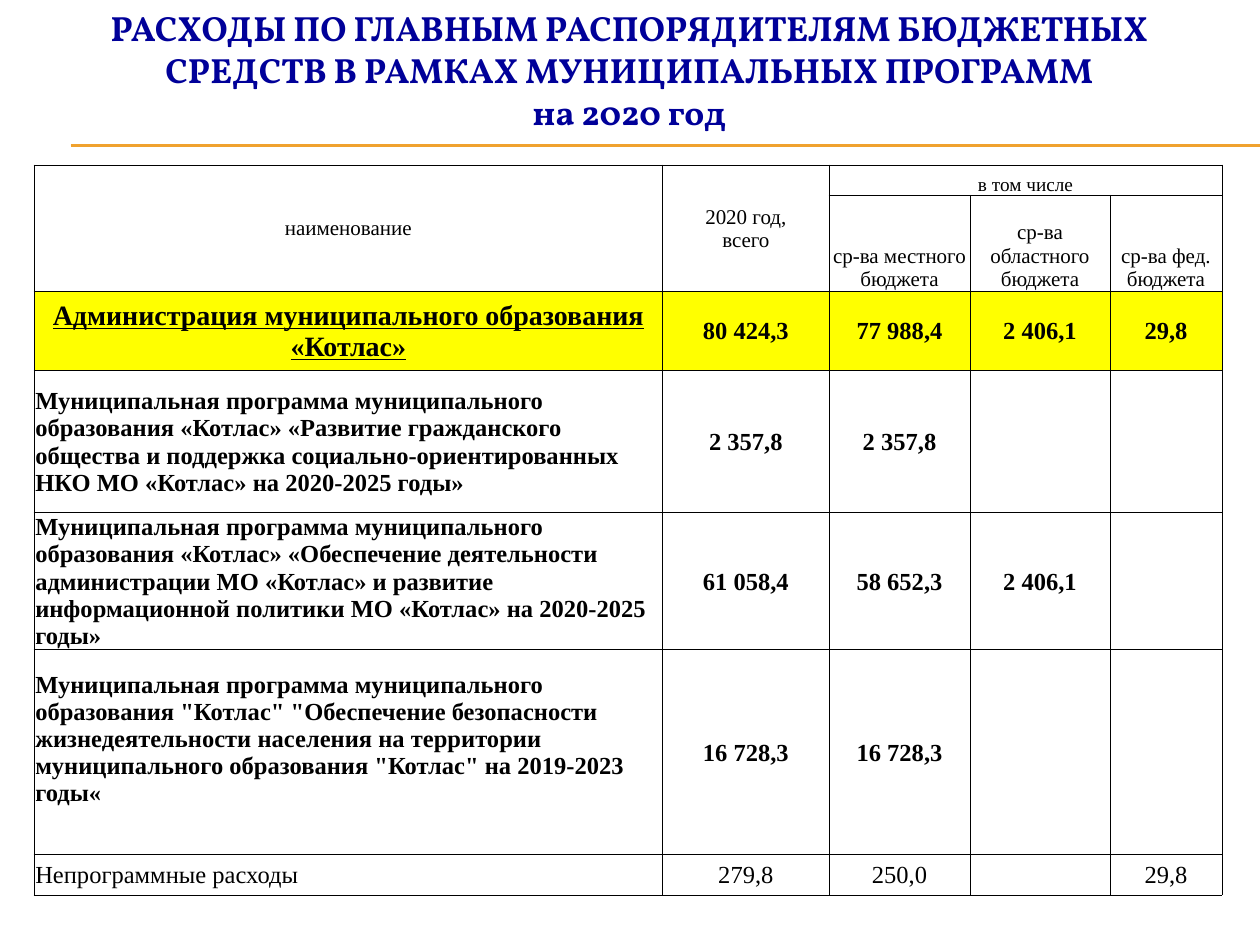
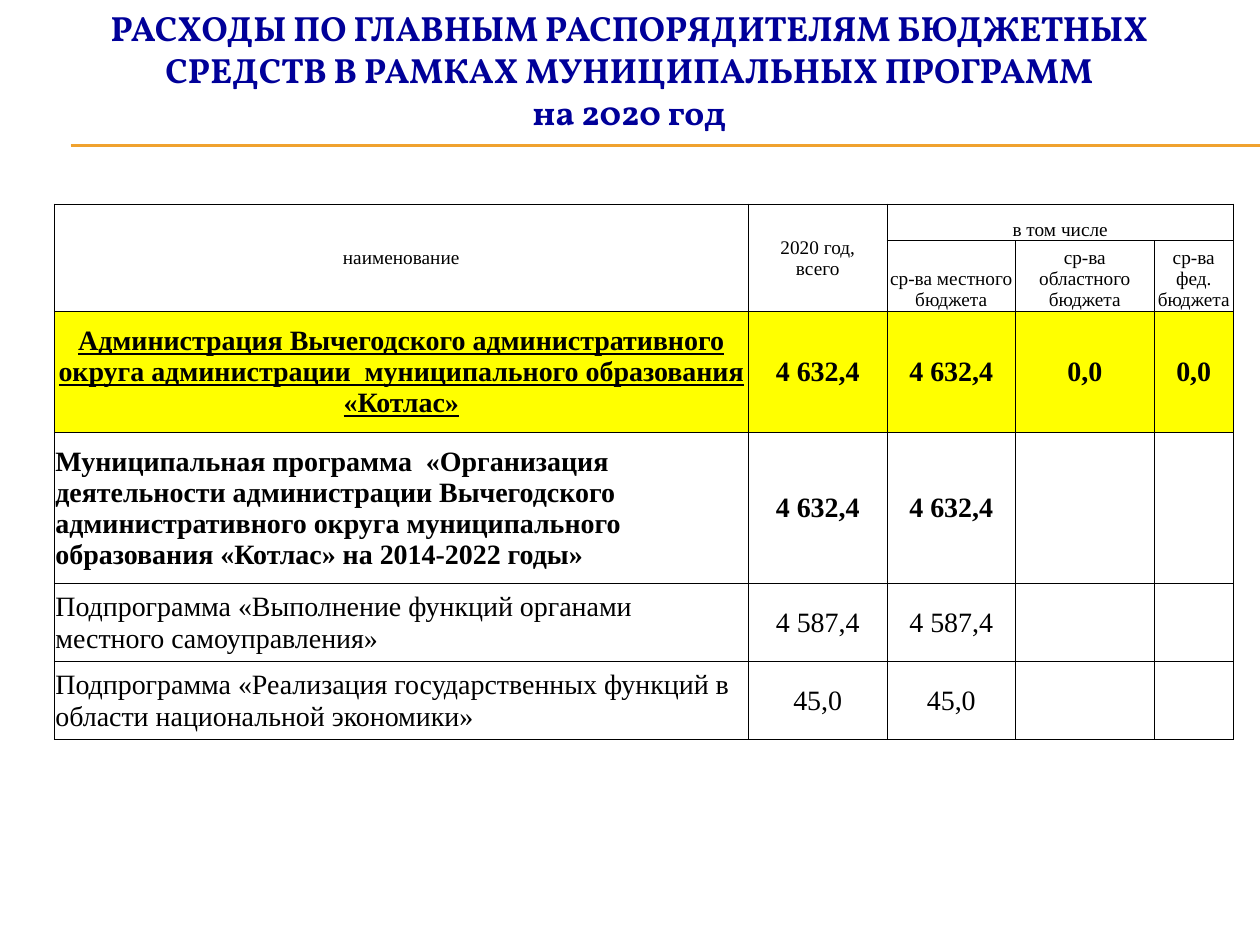
from dataclasses import dataclass

from pptx import Presentation
from pptx.dml.color import RGBColor
from pptx.enum.text import MSO_ANCHOR, MSO_AUTO_SIZE, PP_ALIGN
from pptx.oxml import parse_xml
from pptx.oxml.ns import nsdecls
from pptx.util import Inches, Pt


@dataclass(frozen=True)
class Theme:
    title_color: RGBColor = RGBColor(0x00, 0x00, 0x99)
    rule_color: RGBColor = RGBColor(0xF0, 0xA2, 0x2E)
    text_color: RGBColor = RGBColor(0x00, 0x00, 0x00)
    total_fill: RGBColor = RGBColor(0xFF, 0xFF, 0x00)
    border_color: str = "000000"
    title_font: str = "Vollkorn"
    table_font: str = "Times New Roman"
    title_size: int = 20
    total_size: int = 16
    group_size: int = 11


theme = Theme()

TITLE = (
    "РАСХОДЫ ПО ГЛАВНЫМ РАСПОРЯДИТЕЛЯМ БЮДЖЕТНЫХ "
    "СРЕДСТВ В РАМКАХ МУНИЦИПАЛЬНЫХ ПРОГРАММ\nна 2020 год"
)
HEADER = [
    ["наименование", "2020 год,\nвсего", "в том числе", "", ""],
    ["", "", "ср-ва местного бюджета", "ср-ва областного бюджета", "ср-ва фед. бюджета"],
]
HEADER_ROWS = len(HEADER)
TOTAL_ROW = HEADER_ROWS

# The first body row is the total; "plain_from" is the first row that is not bold.
pages = [
    {
        "left": 0.27, "top": 1.31, "header_size": 12, "body_size": 14,
        "columns": [4.99, 1.32, 1.12, 1.11, 0.89],
        "heights": [0.24, 0.76, 0.63, 1.13, 0.86, 1.63, 0.32],
        "plain_from": 6,
        "bottom_insets": {5: 0.21},
        "body": [
            ["Администрация муниципального образования «Котлас»",
             "80 424,3", "77 988,4", "2 406,1", "29,8"],
            ["Муниципальная программа муниципального образования «Котлас» «Развитие "
             "гражданского общества и поддержка социально-ориентированных НКО "
             "МО «Котлас» на 2020-2025 годы»",
             "2 357,8", "2 357,8", "", ""],
            ["Муниципальная программа муниципального образования «Котлас» «Обеспечение "
             "деятельности администрации МО «Котлас» и развитие информационной "
             "политики МО «Котлас» на 2020-2025 годы»",
             "61 058,4", "58 652,3", "2 406,1", ""],
            ['Муниципальная программа муниципального образования "Котлас" "Обеспечение '
             "безопасности жизнедеятельности населения на территории муниципального "
             'образования "Котлас" на 2019-2023 годы«',
             "16 728,3", "16 728,3", "", ""],
            ["Непрограммные расходы", "279,8", "250,0", "", "29,8"],
        ],
    },
    {
        "left": 0.43, "top": 1.62, "header_size": 11, "body_size": 16,
        "columns": [5.51, 1.1, 1.02, 1.1, 0.63],
        "heights": [0.29, 0.56, 0.96, 1.2, 0.62, 0.62],
        "plain_from": 4,
        "bottom_insets": {},
        "body": [
            ["Администрация Вычегодского административного округа администрации  "
             "муниципального образования «Котлас»",
             "4 632,4", "4 632,4", "0,0", "0,0"],
            ["Муниципальная программа  «Организация деятельности администрации "
             "Вычегодского административного округа муниципального образования "
             "«Котлас» на 2014-2022 годы»",
             "4 632,4", "4 632,4", "", ""],
            ["Подпрограмма «Выполнение функций органами местного самоуправления»",
             "4 587,4", "4 587,4", "", ""],
            ["Подпрограмма «Реализация государственных функций в области "
             "национальной экономики»",
             "45,0", "45,0", "", ""],
        ],
    },
]


def write(paragraph, text, font_name, size, color, bold):
    paragraph.text = text
    font = paragraph.font
    font.name, font.size, font.bold = font_name, Pt(size), bold
    font.color.rgb = color


def add_borders(cell):
    """Draw thin lines on all four sides; they must precede the cell's fill."""
    properties = cell._tc.get_or_add_tcPr()
    for position, side in enumerate(("lnL", "lnR", "lnT", "lnB")):
        properties.insert(position, parse_xml(
            f'<a:{side} {nsdecls("a")} w="{Pt(0.5)}"><a:solidFill>'
            f'<a:srgbClr val="{theme.border_color}"/></a:solidFill></a:{side}>'
        ))


deck = Presentation()
deck.slide_width, deck.slide_height = Inches(10), Inches(7.5)
blank_layout = deck.slide_layouts[6]

for content in pages:
    page = deck.slides.add_slide(blank_layout)

    for rule_top in (1.15, 1.16):
        rule = page.shapes.add_connector(
            1, Inches(0.56), Inches(rule_top), Inches(10), Inches(rule_top))
        rule.line.color.rgb = theme.rule_color
        rule.line.width = Pt(0.75)
        rule._element.spPr.append(parse_xml(f'<a:effectLst {nsdecls("a")}/>'))

    rows = HEADER + content["body"]
    table = page.shapes.add_table(
        len(rows), len(content["columns"]),
        Inches(content["left"]), Inches(content["top"]),
        Inches(sum(content["columns"])), Inches(sum(content["heights"])),
    ).table
    table.first_row = table.horz_banding = False
    for column, width in zip(table.columns, content["columns"]):
        column.width = Inches(width)
    for row, height in zip(table.rows, content["heights"]):
        row.height = Inches(height)

    for row_index, values in enumerate(rows):
        is_header = row_index < HEADER_ROWS
        is_total = row_index == TOTAL_ROW
        for column_index, value in enumerate(values):
            cell = table.cell(row_index, column_index)
            is_name = column_index == 0
            cell.margin_left = cell.margin_right = cell.margin_top = Inches(0.01)
            bottom_inset = content["bottom_insets"].get(row_index, 0) if is_name else 0
            cell.margin_bottom = Inches(bottom_inset)
            sits_low = is_header and column_index >= 2
            cell.vertical_anchor = MSO_ANCHOR.BOTTOM if sits_low else MSO_ANCHOR.MIDDLE
            if is_total:
                cell.fill.solid()
                cell.fill.fore_color.rgb = theme.total_fill
            else:
                cell.fill.background()

            if is_header:
                is_group = row_index == 0 and column_index >= 2
                size = theme.group_size if is_group else content["header_size"]
            else:
                size = theme.total_size if is_total and is_name else content["body_size"]
            bold = TOTAL_ROW <= row_index < content["plain_from"]
            paragraph = cell.text_frame.paragraphs[0]
            write(paragraph, value, theme.table_font, size, theme.text_color, bold)
            paragraph.font.underline = is_total and is_name
            is_program = is_name and row_index > TOTAL_ROW
            paragraph.alignment = PP_ALIGN.LEFT if is_program else PP_ALIGN.CENTER
            add_borders(cell)

    for column_index in (0, 1):
        table.cell(0, column_index).merge(table.cell(1, column_index))
    table.cell(0, 2).merge(table.cell(0, 4))

    title = page.shapes.add_textbox(Inches(0.35), 0, Inches(9.29), Inches(1.1))
    title.text_frame.word_wrap = True
    title.text_frame.auto_size = MSO_AUTO_SIZE.SHAPE_TO_FIT_TEXT
    heading = title.text_frame.paragraphs[0]
    write(heading, TITLE, theme.title_font, theme.title_size, theme.title_color, True)
    heading.alignment = PP_ALIGN.CENTER

deck.save("out.pptx")
